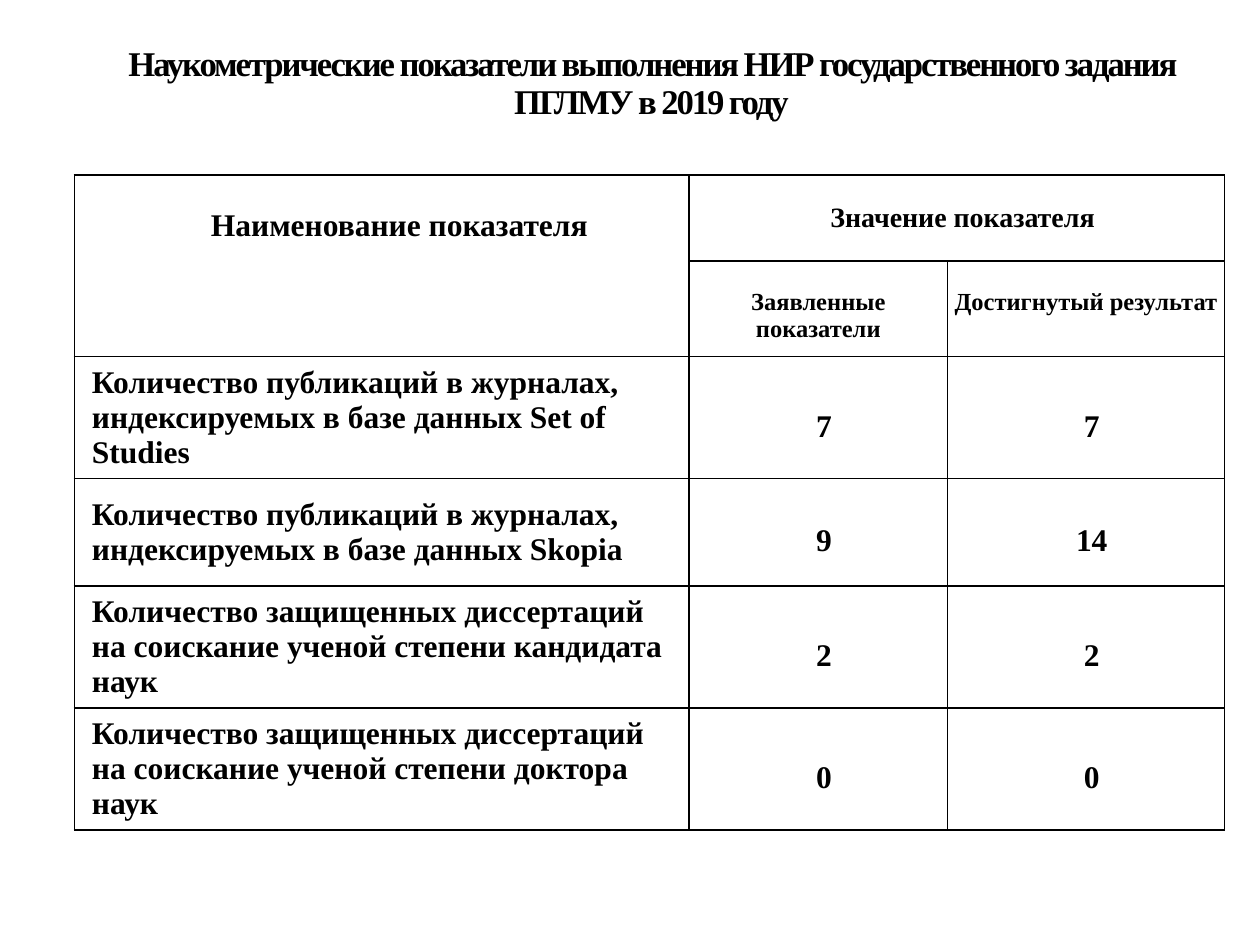
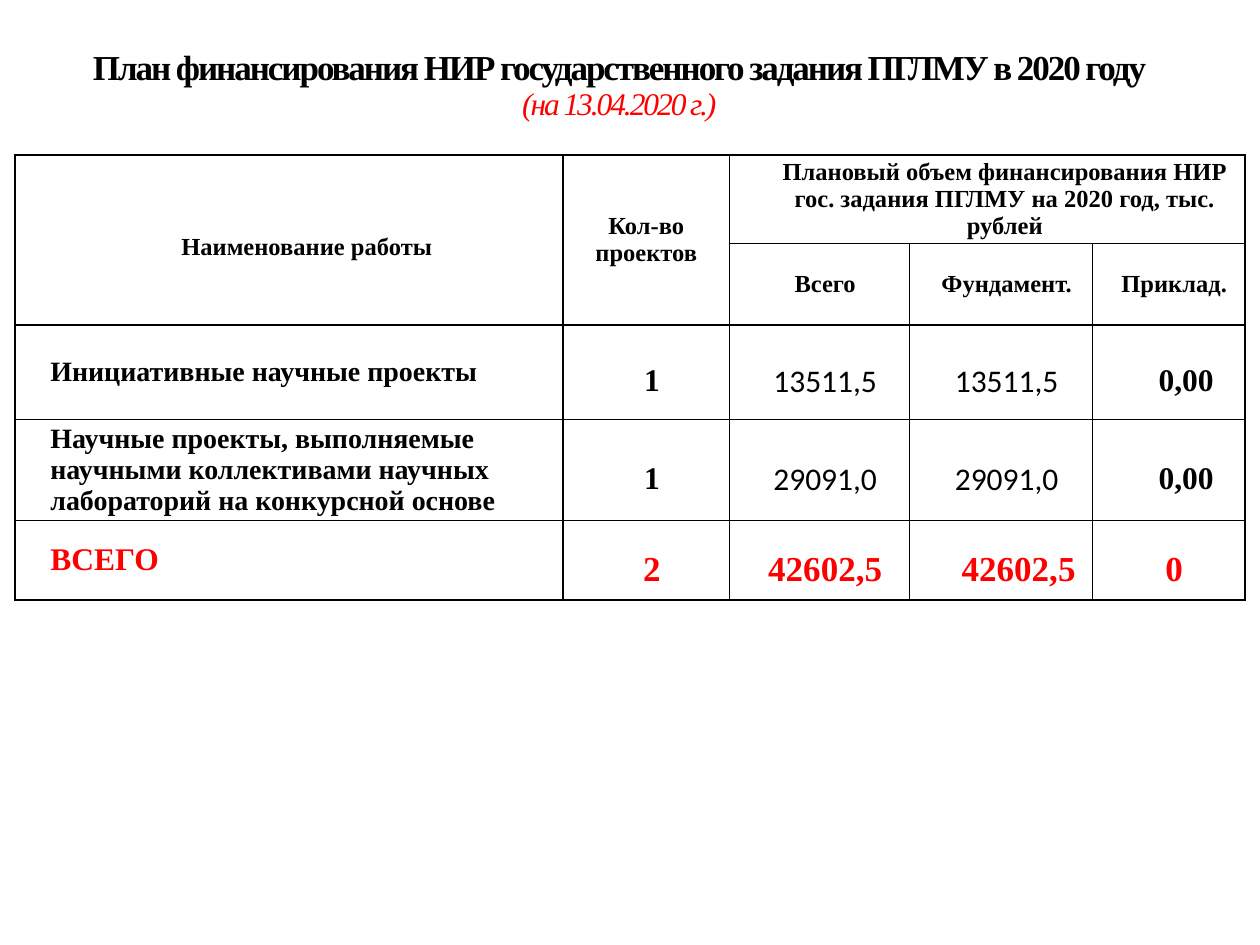
from dataclasses import dataclass

from lxml import etree
from pptx import Presentation
from pptx.dml.color import RGBColor
from pptx.enum.text import MSO_ANCHOR, PP_ALIGN
from pptx.oxml.ns import qn
from pptx.util import Inches, Pt

LEFT, CENTER = PP_ALIGN.LEFT, PP_ALIGN.CENTER
TOP, MIDDLE = MSO_ANCHOR.TOP, MSO_ANCHOR.MIDDLE
SERIF, SANS = "Times New Roman", "Calibri"
BLACK, RED = "000000", "FF0000"
SIDES = ("a:lnL", "a:lnR", "a:lnT", "a:lnB")


@dataclass
class Style:
    size: float = 18
    color: str = BLACK
    font: str = SERIF
    bold: bool = True
    slant: bool = False
    align: PP_ALIGN = CENTER
    space: float = 1


@dataclass
class Line:
    text: str
    style: Style


@dataclass
class Entry:
    row: int
    col: int
    text: str
    style: Style
    indent: float = 0.09
    drop: float = 0
    rows: int = 1
    cols: int = 1


@dataclass
class Grid:
    left: float
    top: float
    widths: list[float]
    heights: list[float]
    inset: float
    cells: list[Entry]


@dataclass
class Page:
    box: tuple[float, float, float, float]
    title: list[Line]
    grid: Grid


def paint(color: str) -> RGBColor:
    return RGBColor.from_string(color)


def format_text(para, style: Style) -> None:
    para.alignment = style.align
    para.line_spacing = style.space
    for run in para.runs:
        font = run.font
        font.name = style.font
        font.size = Pt(style.size)
        font.bold = style.bold
        font.italic = style.slant
        font.color.rgb = paint(style.color)


def draw_title(slide, page: Page) -> None:
    frame = slide.shapes.add_textbox(*map(Inches, page.box)).text_frame
    frame.word_wrap = True
    frame.vertical_anchor = MIDDLE
    frame.text = "\n".join(line.text for line in page.title)
    for para, line in zip(frame.paragraphs, page.title):
        format_text(para, line.style)
        for run in para.runs:
            run.font._element.set("spc", "-120")


def draw_border(cell) -> None:
    props = cell._tc.get_or_add_tcPr()
    for side in SIDES:
        edge = etree.SubElement(props, qn(side), w=str(Pt(1)))
        fill = etree.SubElement(edge, qn("a:solidFill"))
        etree.SubElement(fill, qn("a:srgbClr"), val=BLACK)


def draw_grid(slide, grid: Grid) -> None:
    frame = slide.shapes.add_table(
        len(grid.heights), len(grid.widths),
        Inches(grid.left), Inches(grid.top),
        Inches(sum(grid.widths)), Inches(sum(grid.heights)),
    )
    table = frame.table
    table.first_row = False
    table.horz_banding = False
    for col, width in zip(table.columns, grid.widths):
        col.width = Inches(width)
    for row, height in zip(table.rows, grid.heights):
        row.height = Inches(height)
    for cell in table.iter_cells():
        draw_border(cell)
        cell.fill.background()
        cell.margin_top = cell.margin_bottom = Inches(0)
        cell.margin_right = Inches(grid.inset)
    for entry in grid.cells:
        cell = table.cell(entry.row, entry.col)
        if entry.rows > 1 or entry.cols > 1:
            cell.merge(table.cell(entry.row + entry.rows - 1,
                                  entry.col + entry.cols - 1))
        cell.text_frame.text = entry.text
        cell.margin_left = Inches(grid.inset + entry.indent)
        cell.margin_top = Inches(entry.drop)
        cell.vertical_anchor = TOP if entry.drop else MIDDLE
        format_text(cell.text_frame.paragraphs[0], entry.style)


HEAD = Style(14)
NAME = Style(align=LEFT)
LABEL = Style(16, align=LEFT)
COUNT = Style(space=1.5)
PLAIN = Style(font=SANS, bold=False, space=1.5)
TOTAL = Style(20, RED, space=1.5)

SCORES = [
    ("Количество публикаций в журналах, индексируемых в базе данных Set of Studies", "7", "7"),
    ("Количество публикаций в журналах, индексируемых в базе данных Skopia", "9", "14"),
    ("Количество защищенных диссертаций на соискание ученой степени кандидата наук", "2", "2"),
    ("Количество защищенных диссертаций на соискание ученой степени доктора наук", "0", "0"),
]
FUNDS = [
    ("Инициативные научные проекты", "1", "13511,5", "13511,5", "0,00"),
    ("Научные проекты, выполняемые научными коллективами научных лабораторий "
     "на конкурсной основе", "1", "29091,0", "29091,0", "0,00"),
    ("ВСЕГО", "2", "42602,5", "42602,5", "0"),
]
FUND_STYLES = [LABEL, COUNT, PLAIN, PLAIN, COUNT]
SUM_STYLES = [Style(18, RED, align=LEFT)] + [TOTAL] * 4


def score_cells() -> list[Entry]:
    cells = [
        Entry(0, 0, "Наименование показателя", Style(18), 0.28, 0.26, rows=2),
        Entry(0, 1, "Значение показателя", Style(16), drop=0.22, cols=2),
        Entry(1, 1, "Заявленные показатели", HEAD, 0, 0.22),
        Entry(1, 2, "Достигнутый результат", HEAD, 0, 0.22),
    ]
    for row, texts in enumerate(SCORES, 2):
        for col, text in enumerate(texts):
            cells.append(Entry(row, col, text, COUNT if col else NAME,
                               0.09 if col else 0.1))
    return cells


def fund_cells() -> list[Entry]:
    cells = [
        Entry(0, 0, "Наименование работы", Style(14, space=1.5), 0.28, rows=2),
        Entry(0, 1, "Кол-во проектов", HEAD, 0, rows=2),
        Entry(0, 2, "Плановый объем финансирования НИР гос. задания ПГЛМУ "
              "на 2020 год, тыс. рублей", HEAD, 0.28, cols=3),
    ]
    for col, text in enumerate(("Всего", "Фундамент.", "Приклад."), 2):
        cells.append(Entry(1, col, text, HEAD))
    for row, texts in enumerate(FUNDS, 2):
        last = row == len(FUNDS) + 1
        styles = SUM_STYLES if last else FUND_STYLES
        wide = (0, 3) if last else (0, 4)
        for col, (text, style) in enumerate(zip(texts, styles)):
            cells.append(Entry(row, col, text, style,
                               0.28 if col in wide else 0.09))
    return cells


PAGES = [
    Page(
        (0.67, 0.3, 9, 0.74),
        [Line("Наукометрические показатели выполнения НИР государственного "
              "задания ПГЛМУ в 2019 году", Style(19.8, space=0.9))],
        Grid(0.59, 1.39, [4.88, 2.05, 2.2],
             [0.68, 0.76, 0.97, 0.85, 0.97, 0.97], 0.04, score_cells()),
    ),
    Page(
        (0.5, 0.3, 8.83, 0.77),
        [Line("План финансирования НИР государственного задания ПГЛМУ "
              "в 2020 году", Style(20, space=0.9)),
         Line("(на 13.04.2020 г.)",
              Style(18, RED, bold=False, slant=True, space=0.9))],
        Grid(0.12, 1.23, [4.35, 1.32, 1.43, 1.45, 1.21],
             [0.65, 0.65, 0.75, 0.75, 0.63], 0, fund_cells()),
    ),
]


def main() -> None:
    deck = Presentation()
    deck.slide_width = Inches(10)
    deck.slide_height = Inches(7.5)
    for page in PAGES:
        slide = deck.slides.add_slide(deck.slide_layouts[6])
        draw_title(slide, page)
        draw_grid(slide, page.grid)
    deck.save("out.pptx")


if __name__ == "__main__":
    main()
